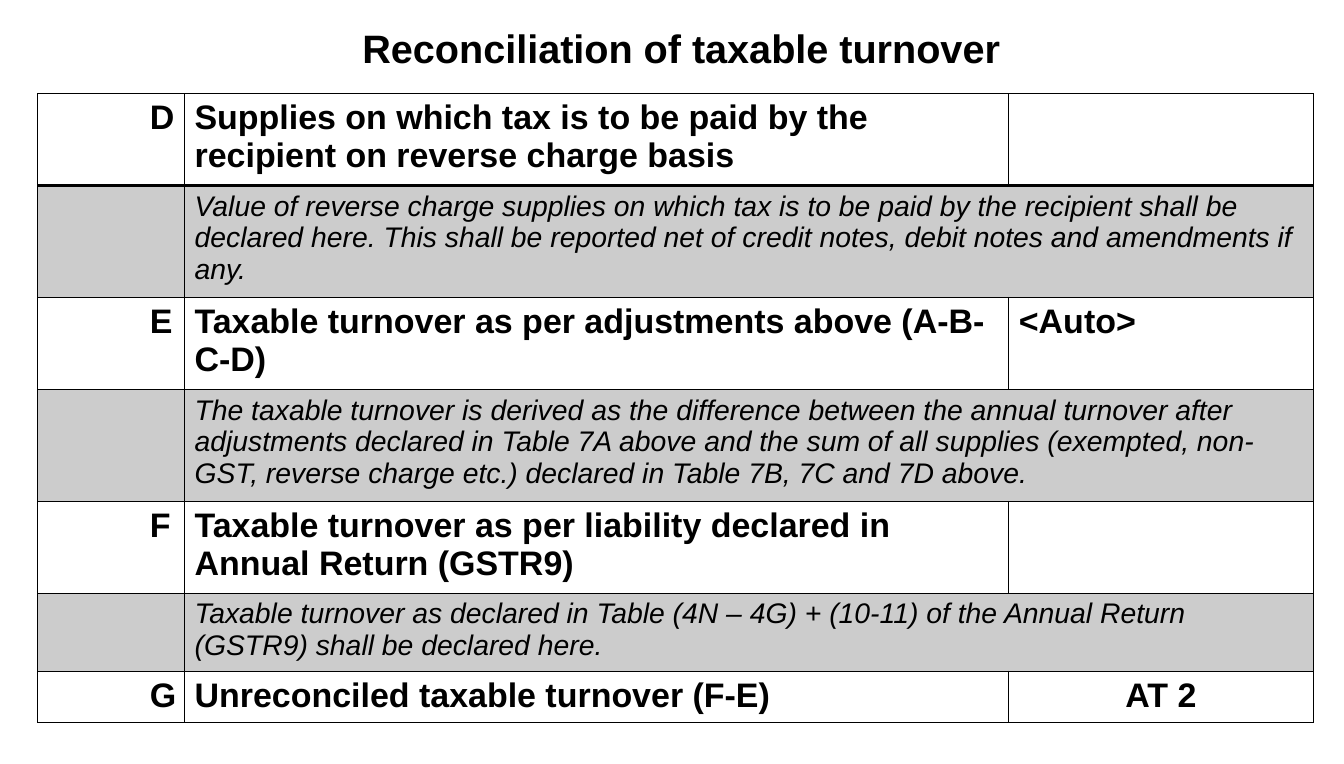
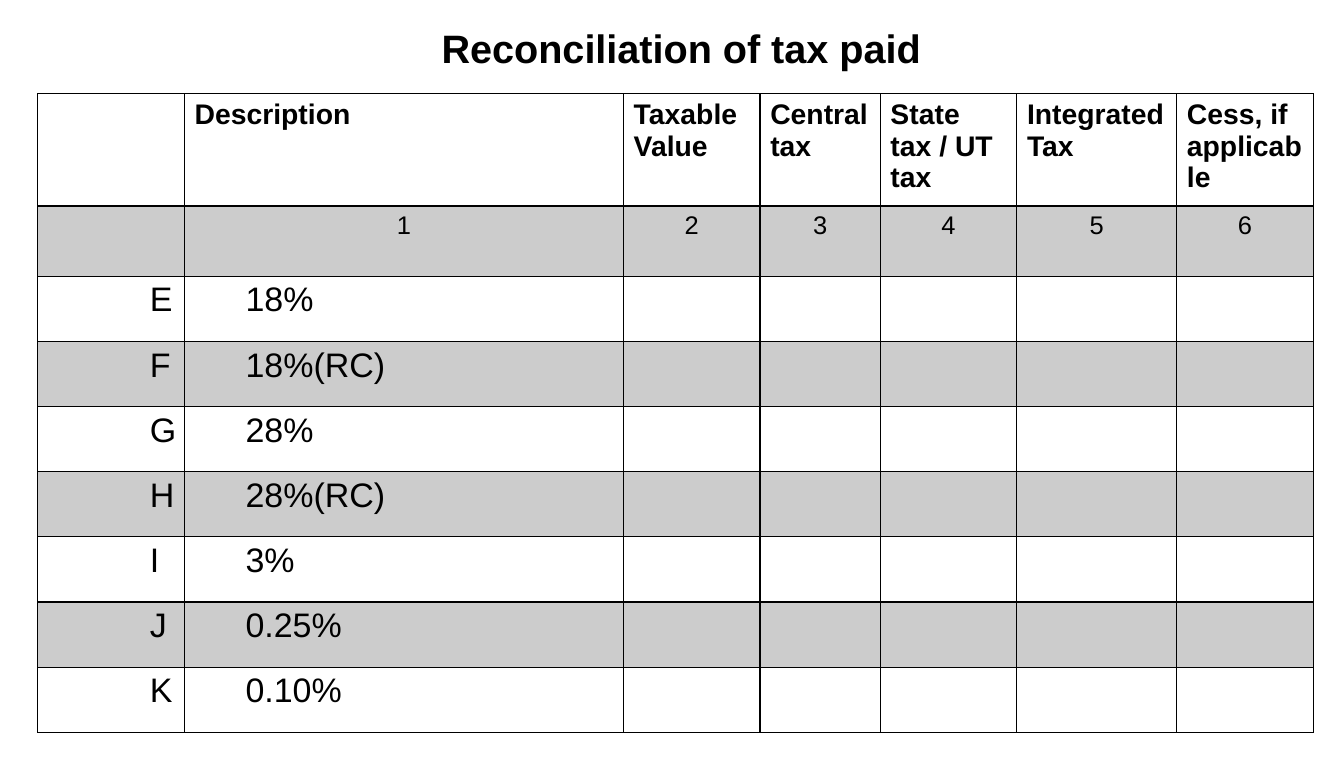
import pptx
import pptx.util
import pptx.dml.color
import pptx.enum.text
import pptx.oxml
from lxml import etree

Inches = pptx.util.Inches
Pt = pptx.util.Pt
CENTER = pptx.enum.text.PP_ALIGN.CENTER
BLACK = pptx.dml.color.RGBColor(0x00, 0x00, 0x00)
GREY = pptx.dml.color.RGBColor(0xCC, 0xCC, 0xCC)
FONT = "Arial"
SLIDE_SIZE = (13.19, 7.5)
TITLE_BOX = (0.64, 0.19, 12.09, 0.57)
TABLE_LEFT, TABLE_TOP = 0.37, 0.92
LETTER_INDENT, RATE_INDENT = 1, 0.5

STYLES = {
    "item": {"size": 24, "bold": True},
    "note": {"size": 20, "italic": True},
    "header": {"size": 20, "bold": True},
    "number": {"size": 18, "align": CENTER},
    "rate": {"size": 24, "indents": (LETTER_INDENT, RATE_INDENT)},
}
STYLES["item"]["indents"] = (LETTER_INDENT,)

TURNOVER = {
    "title": "Reconciliation of taxable turnover",
    "columns": (1.44, 8.09, 2.99),
    "rows": [
        ("item", 0.9, ("D", "Supplies on which tax is to be paid by the recipient "
                       "on reverse charge basis", "")),
        ("note", 1.1, ("", "Value of reverse charge supplies on which tax is to be paid by "
                       "the recipient shall be declared here. This shall be reported net of "
                       "credit notes, debit notes and amendments if any.")),
        ("item", 0.9, ("E", "Taxable turnover as per adjustments above (A-B-C-D)", "<Auto>")),
        ("note", 1.1, ("", "The taxable turnover is derived as the difference between the "
                       "annual turnover after adjustments declared in Table 7A above and the "
                       "sum of all supplies (exempted, non-GST, reverse charge etc.) declared "
                       "in Table 7B, 7C and 7D above.")),
        ("item", 0.9, ("F", "Taxable turnover as per liability declared in "
                       "Annual Return (GSTR9)", "")),
        ("note", 0.76, ("", "Taxable turnover as declared in Table (4N – 4G) + (10-11) of the "
                        "Annual Return (GSTR9) shall be declared here.")),
        ("item", 0.5, ("G", "Unreconciled taxable turnover (F-E)", "AT 2")),
    ],
    "centered": {(6, 2)},
}

RATES = ("18%", "18%(RC)", "28%", "28%(RC)", "3%", "0.25%", "0.10%")
TAX_PAID = {
    "title": "Reconciliation of tax paid",
    "columns": (1.44, 4.31, 1.34, 1.18, 1.34, 1.57, 1.34),
    "rows": [
        ("header", 1.1, ("", "Description", "Taxable Value", "Central tax",
                         "State tax / UT tax", "Integrated Tax", "Cess, if applicable")),
        ("number", 0.69, ("", "1", "2", "3", "4", "5", "6")),
    ] + [("rate", 0.64, (letter, rate) + ("",) * 5) for letter, rate in zip("EFGHIJK", RATES)],
    "centered": set(),
}


def style_paragraph(paragraph, size, bold=False, italic=False, align=None):
    paragraph.font.name = FONT
    paragraph.font.size = Pt(size)
    paragraph.font.bold = bold
    paragraph.font.italic = italic
    paragraph.font.color.rgb = BLACK
    paragraph.alignment = align


def add_title(slide, text):
    box = slide.shapes.add_textbox(*map(Inches, TITLE_BOX))
    box.text_frame.word_wrap = True
    box.text_frame.text = text
    style_paragraph(box.text_frame.paragraphs[0], 28, bold=True, align=CENTER)


def set_borders(cell, bottom_width):
    properties = cell._tc.get_or_add_tcPr()
    widths = (("lnL", 1), ("lnR", 1), ("lnT", 1), ("lnB", bottom_width))
    for position, (side, width) in enumerate(widths):
        line = etree.Element(pptx.oxml.ns.qn("a:" + side), w=str(Pt(width)))
        fill = etree.SubElement(line, pptx.oxml.ns.qn("a:solidFill"))
        etree.SubElement(fill, pptx.oxml.ns.qn("a:srgbClr"), val=str(BLACK))
        properties.insert(position, line)


def fill_cell(cell, text, style, indent, centered):
    cell.text = text
    paragraph = cell.text_frame.paragraphs[0]
    align = CENTER if centered else style.get("align")
    style_paragraph(paragraph, style["size"], style.get("bold", False),
                    style.get("italic", False), align)
    if indent:
        paragraph._p.get_or_add_pPr().set("marL", str(Inches(indent)))


def add_grid(slide, content):
    columns, rows = content["columns"], content["rows"]
    height = sum(row[1] for row in rows)
    table = slide.shapes.add_table(
        len(rows), len(columns), Inches(TABLE_LEFT), Inches(TABLE_TOP),
        Inches(sum(columns)), Inches(height)).table
    table.first_row = table.horz_banding = False
    for column, width in zip(table.columns, columns):
        column.width = Inches(width)
    for row_index, (style_name, row_height, texts) in enumerate(rows):
        table.rows[row_index].height = Inches(row_height)
        style = STYLES[style_name]
        indents = style.get("indents", ())
        for column_index in range(len(columns)):
            cell = table.cell(row_index, column_index)
            if row_index % 2:
                cell.fill.solid()
                cell.fill.fore_color.rgb = GREY
            else:
                cell.fill.background()
            set_borders(cell, 2 if row_index == 0 else 1)
            if column_index < len(texts):
                indent = indents[column_index] if column_index < len(indents) else 0
                fill_cell(cell, texts[column_index], style, indent,
                          (row_index, column_index) in content["centered"])
        if len(texts) < len(columns):
            table.cell(row_index, len(texts) - 1).merge(
                table.cell(row_index, len(columns) - 1))


def main():
    presentation = pptx.Presentation()
    presentation.slide_width, presentation.slide_height = map(Inches, SLIDE_SIZE)
    for content in (TURNOVER, TAX_PAID):
        slide = presentation.slides.add_slide(presentation.slide_layouts[6])
        add_title(slide, content["title"])
        add_grid(slide, content)
    presentation.save("out.pptx")


if __name__ == "__main__":
    main()
